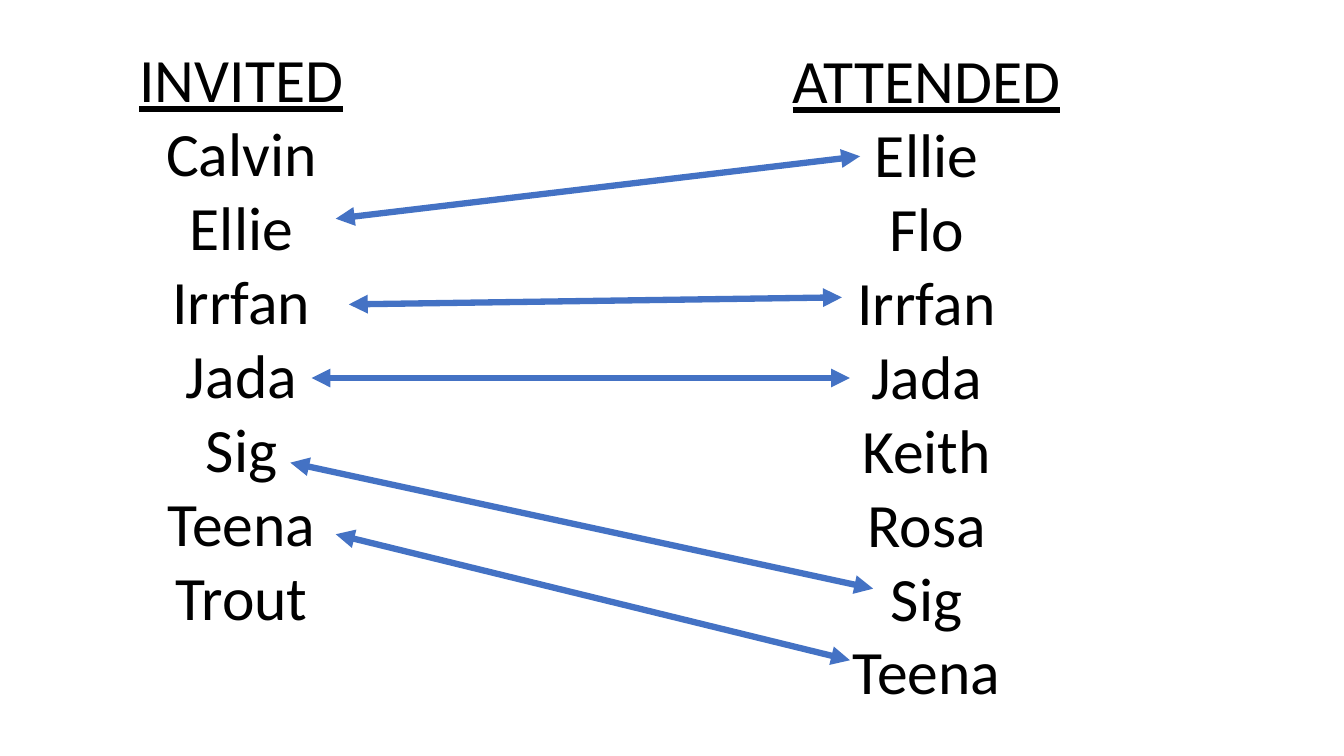
from lxml import etree
from pptx import Presentation
from pptx import util as u
from pptx.dml.color import RGBColor
from pptx.enum import shapes, text
from pptx.oxml import ns

BLACK = RGBColor(0x00, 0x00, 0x00)
BLUE = RGBColor(0x44, 0x72, 0xC4)

INVITED = ["Calvin", "Ellie", "Irrfan", "Jada", "Sig", "Teena", "Trout"]
ATTENDED = ["Ellie", "Flo", "Irrfan", "Jada", "Keith", "Rosa", "Sig", "Teena"]
INVITED_BOX = (1.27, 0.36, 2.25, 6.02)
ATTENDED_BOX = (7.75, 0.37, 2.88, 6.77)
MATCHES = {
    "Ellie": ((3.33, 2.17), (8.53, 1.55)),
    "Sig": ((2.88, 4.59), (8.66, 5.84)),
    "Irrfan": ((3.46, 3.02), (8.35, 2.95)),
    "Jada": ((3.09, 3.75), (8.43, 3.75)),
    "Teena": ((3.33, 5.3), (8.43, 6.55)),
}


def add_guest_list(slide, box, heading, guests):
    """Place an underlined heading with centred guest names below it."""
    frame = slide.shapes.add_textbox(*map(u.Inches, box)).text_frame
    frame.word_wrap = False
    frame.auto_size = text.MSO_AUTO_SIZE.SHAPE_TO_FIT_TEXT
    frame.text = "\n".join([heading, *guests])
    for line in frame.paragraphs:
        line.alignment = text.PP_ALIGN.CENTER
        font = line.runs[0].font
        look = {"name": "Calibri", "size": u.Pt(44), "underline": line.text == heading}
        for attribute, value in look.items():
            setattr(font, attribute, value)
        font.color.rgb = BLACK


def add_match_arrow(slide, start, end):
    """Join the two entries of one guest with a double-headed arrow."""
    arrow = slide.shapes.add_connector(
        shapes.MSO_CONNECTOR.STRAIGHT, *map(u.Inches, (*start, *end))
    )
    arrow.line.color.rgb = BLUE
    arrow.line.width = u.Pt(4.5)
    outline = arrow.line._get_or_add_ln()
    for tip in ("a:headEnd", "a:tailEnd"):
        etree.SubElement(outline, ns.qn(tip), type="triangle")
    etree.SubElement(outline.getparent(), ns.qn("a:effectLst"))


def main():
    """Build the slide that matches invited guests to those who attended."""
    deck = Presentation()
    deck.slide_width, deck.slide_height = u.Inches(13.33), u.Inches(7.5)
    slide = deck.slides.add_slide(deck.slide_layouts.get_by_name("Blank"))
    add_guest_list(slide, ATTENDED_BOX, "ATTENDED", ATTENDED)
    add_guest_list(slide, INVITED_BOX, "INVITED", INVITED)
    for start, end in MATCHES.values():
        add_match_arrow(slide, start, end)
    deck.save("out.pptx")


if __name__ == "__main__":
    main()
